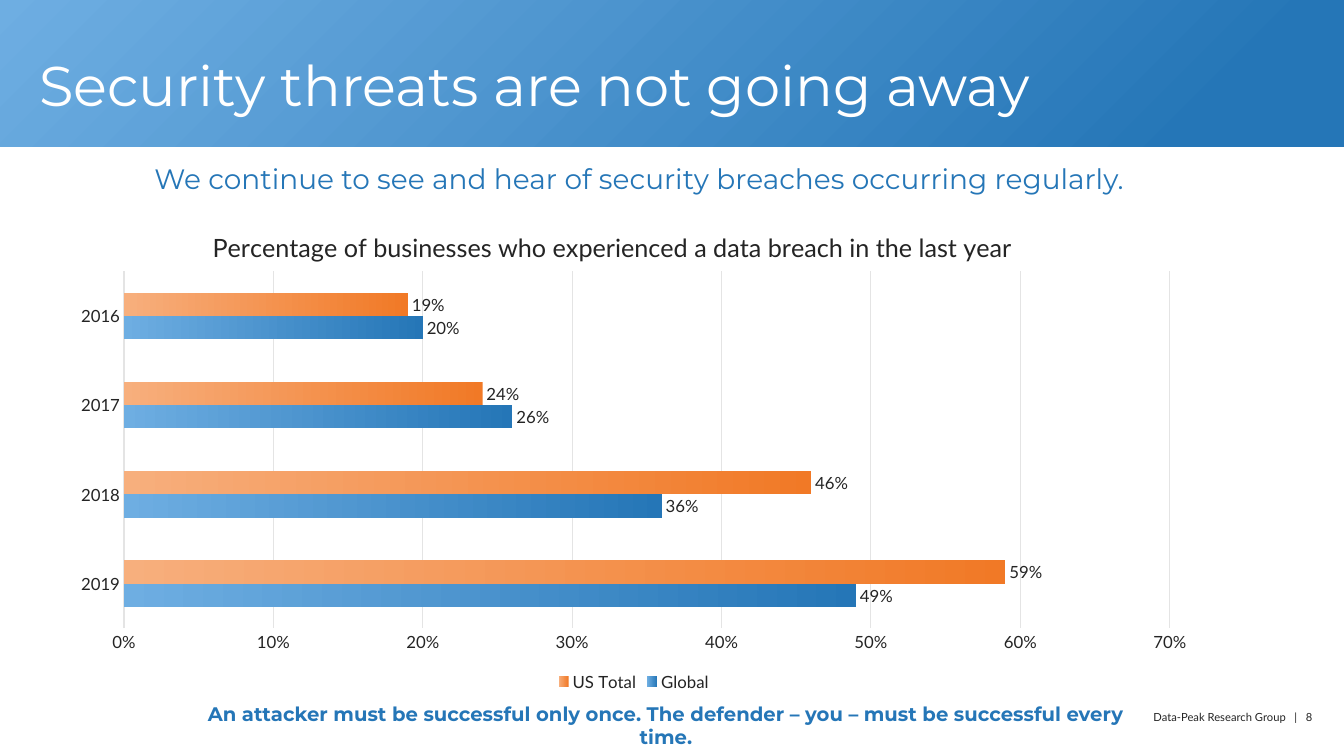
from lxml import etree
from pptx import Presentation
from pptx.chart.data import CategoryChartData
from pptx.dml.color import RGBColor
from pptx.enum.chart import XL_CHART_TYPE, XL_LABEL_POSITION, XL_LEGEND_POSITION, XL_TICK_MARK
from pptx.enum.shapes import MSO_SHAPE
from pptx.enum.text import PP_ALIGN
from pptx.oxml.ns import qn
from pptx.util import Emu, Pt

BAR_CLUSTERED = XL_CHART_TYPE.BAR_CLUSTERED
OUTSIDE_END = XL_LABEL_POSITION.OUTSIDE_END
LEGEND_BOTTOM = XL_LEGEND_POSITION.BOTTOM
NO_TICKS = XL_TICK_MARK.NONE
LEFT, CENTER, RIGHT = PP_ALIGN.LEFT, PP_ALIGN.CENTER, PP_ALIGN.RIGHT
PX = 9144  # 100 px to the inch

THEME = {
    "white": RGBColor.from_string("FFFFFF"),
    "ink": RGBColor.from_string("242424"),
    "grid": RGBColor.from_string("E4E4E4"),
    "blue": RGBColor.from_string("2576B7"),
    "light_blue": RGBColor.from_string("6EAEE2"),
    "orange": RGBColor.from_string("F17926"),
    "light_orange": RGBColor.from_string("F7AF7D"),
    "heading": "Montserrat",
    "body": "Lato",
    "title_size": Pt(40),
    "subtitle_size": Pt(20),
    "chart_title_size": Pt(18),
    "message_size": Pt(14),
    "chart_size": Pt(12),
    "footer_size": Pt(8),
}


def set_gradient(fill, stops, angle):
    fill.gradient()
    fill.gradient_angle = angle
    for stop, (position, color) in zip(fill.gradient_stops, stops):
        stop.position = position
        stop.color.rgb = THEME[color]


def set_layout(element, index, values):
    layout = element.find(qn("c:layout"))
    if layout is None:
        layout = etree.Element(qn("c:layout"))
        element.insert(index, layout)
    manual = etree.SubElement(layout, qn("c:manualLayout"))
    for name, value in values.items():
        etree.SubElement(manual, qn(f"c:{name}")).set("val", str(value))


presentation = Presentation()
presentation.slide_width = Emu(1334 * PX)
presentation.slide_height = Emu(750 * PX)
slide = presentation.slides.add_slide(presentation.slide_layouts[6])

# Header band
band = slide.shapes.add_shape(MSO_SHAPE.RECTANGLE, 0, 0, 1334 * PX, 145 * PX)
band.shadow.inherit = False
band.line.fill.background()
set_gradient(band.fill, [(0, "light_blue"), (0.89, "blue")], 315)

# Texts: box, inset, alignment, line spacing, font, size, color, bold, wording
texts = [
    ((39, 58, 1078, 124), 0, LEFT, 0.9, "heading", "title_size", "white", False,
     "Security threats are not going away"),
    ((58, 157, 1153, 39), 0, CENTER, 1.1, "heading", "subtitle_size", "blue", False,
     "We continue to see and hear of security breaches occurring regularly."),
    ((175, 691, 972, 34), 5, CENTER, 1.0, "heading", "message_size", "blue", True,
     "An attacker must be successful only once. "
     "The defender – you – must be successful every time."),
    ((963, 705, 340, 13), 0, RIGHT, 1.0, "body", "footer_size", "ink", False,
     "Data-Peak Research Group   |   8"),
]
for box, inset, alignment, spacing, font, size, color, bold, wording in texts:
    frame = slide.shapes.add_textbox(*(length * PX for length in box)).text_frame
    frame_format = {
        "word_wrap": True,
        "margin_left": 2 * inset * PX, "margin_right": 2 * inset * PX,
        "margin_top": inset * PX, "margin_bottom": inset * PX,
    }
    for name, value in frame_format.items():
        setattr(frame, name, value)
    paragraph = frame.paragraphs[0]
    paragraph.alignment = alignment
    paragraph.line_spacing = spacing
    run = paragraph.add_run()
    run.text = wording
    for name, value in {"name": THEME[font], "size": THEME[size], "bold": bold}.items():
        setattr(run.font, name, value)
    run.font.color.rgb = THEME[color]

# Breach chart
breaches = CategoryChartData(number_format="0%")
breaches.categories = ["2019", "2018", "2017", "2016"]
breaches.add_series("Global", [0.49, 0.36, 0.26, 0.2])
breaches.add_series("US Total", [0.59, 0.46, 0.24, 0.19])
chart = slide.shapes.add_chart(
    BAR_CLUSTERED, 58 * PX, 203 * PX, 1142 * PX, 487 * PX, breaches).chart
chart.font.name = THEME["body"]
chart.font.size = THEME["chart_size"]
chart.font.color.rgb = THEME["ink"]

# Chart title and plot position
chart.has_title = True
title_paragraph = chart.chart_title.text_frame.paragraphs[0]
title_run = title_paragraph.add_run()
title_run.text = "Percentage of businesses who experienced a data breach in the last year"
title_format = {"name": THEME["body"], "size": THEME["chart_title_size"], "bold": False}
for name, value in title_format.items():
    setattr(title_run.font, name, value)
title_run.font.color.rgb = THEME["ink"]
set_layout(chart.chart_title._element, 1,
           {"xMode": "edge", "yMode": "edge", "x": 0.13, "y": 0.04})
set_layout(chart._chartSpace.chart.plotArea, 0, {
    "layoutTarget": "inner", "xMode": "edge", "yMode": "edge",
    "x": 0.057, "y": 0.136, "w": 0.909, "h": 0.727})

# Legend and axes
chart.has_legend = True
chart.legend.position = LEGEND_BOTTOM
chart.legend.include_in_layout = False
years, share = chart.category_axis, chart.value_axis
for axis in (years, share):
    axis.major_tick_mark = axis.minor_tick_mark = NO_TICKS
share_format = {"minimum_scale": 0, "maximum_scale": 0.7, "major_unit": 0.1,
                "has_major_gridlines": True}
for name, value in share_format.items():
    setattr(share, name, value)
share.tick_labels.number_format = "0%"
share.tick_labels.number_format_is_linked = False
share.format.line.fill.background()
for line in (years.format.line, share.major_gridlines.format.line):
    line.color.rgb = THEME["grid"]
    line.width = Pt(0.75)

# Bars and their labels
plot = chart.plots[0]
for name, value in {"gap_width": 182, "overlap": 0, "vary_by_categories": False}.items():
    setattr(plot, name, value)
for series, color in zip(plot.series, ("blue", "orange")):
    set_gradient(series.format.fill, [(0, color), (1, f"light_{color}")], 180)
    labels = series.data_labels
    label_format = {"show_value": True, "position": OUTSIDE_END,
                    "number_format": "0%", "number_format_is_linked": False}
    for name, value in label_format.items():
        setattr(labels, name, value)

presentation.save("out.pptx")
